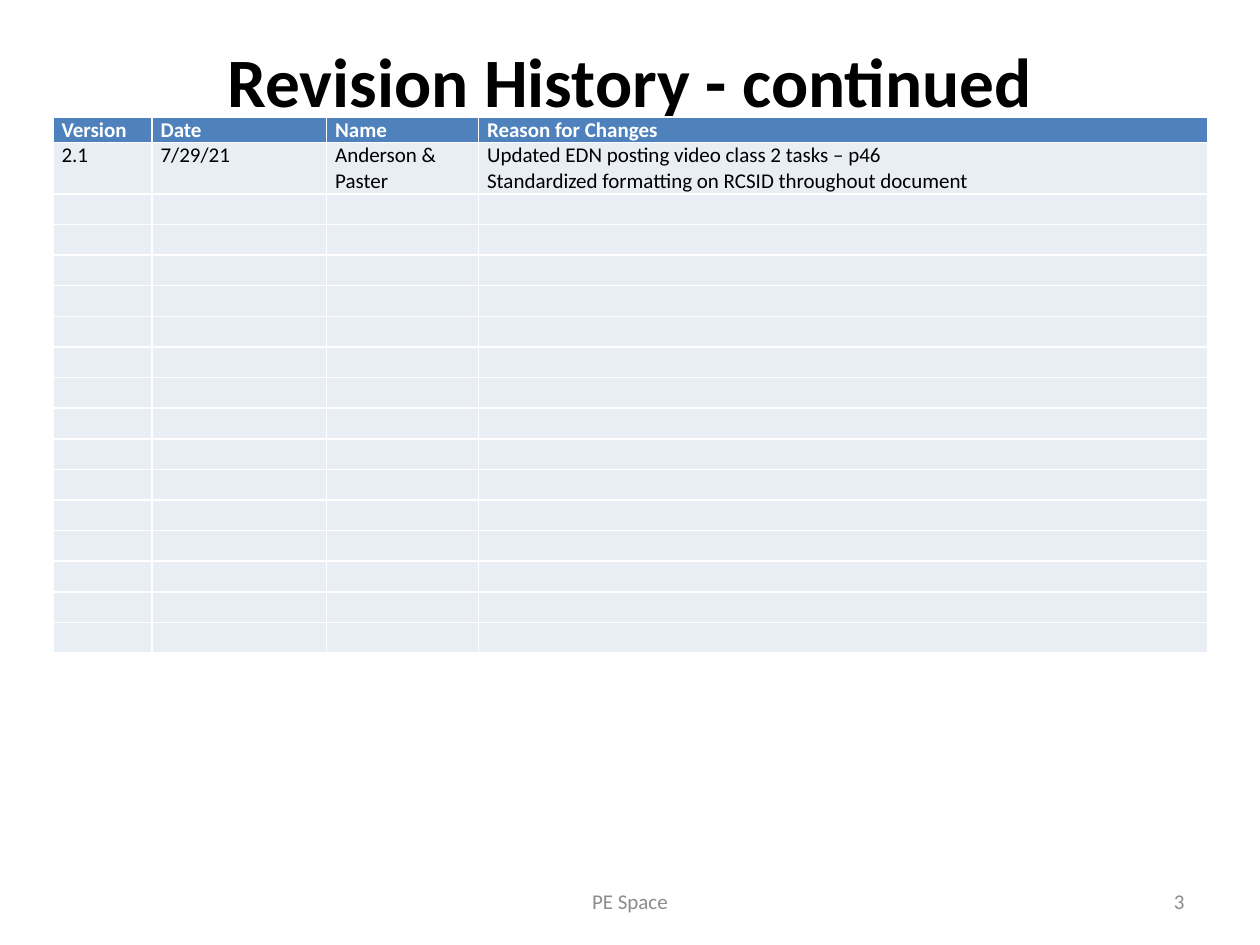
from pptx import Presentation
from pptx.dml.color import RGBColor
from pptx.enum.text import MSO_ANCHOR, PP_ALIGN
from pptx.util import Pt

COLORS = {
    "header": "4F81BD",
    "body": "E9EDF4",
    "white": "FFFFFF",
    "black": "000000",
    "footer": "8C8C8C",
}


def style_paragraph(paragraph, size, color, bold=False, alignment=PP_ALIGN.LEFT):
    paragraph.alignment = alignment
    paragraph.font.name = "Calibri"
    paragraph.font.size = Pt(size)
    paragraph.font.bold = bold
    paragraph.font.color.rgb = RGBColor.from_string(COLORS[color])


presentation = Presentation()
presentation.slide_width = Pt(720)
presentation.slide_height = Pt(540)
slide = presentation.slides.add_slide(presentation.slide_layouts[6])

text_boxes = [
    ("Revision History - continued", (36, 21.6, 648, 90), 39.6, "black", True, PP_ALIGN.CENTER, MSO_ANCHOR.TOP),
    ("PE Space", (246, 500.5, 228, 28.75), 12, "footer", False, PP_ALIGN.CENTER, MSO_ANCHOR.MIDDLE),
    ("3", (516, 500.5, 168, 28.75), 12, "footer", False, PP_ALIGN.RIGHT, MSO_ANCHOR.MIDDLE),
]
for text, box, size, color, bold, alignment, anchor in text_boxes:
    shape = slide.shapes.add_textbox(*map(Pt, box))
    frame = shape.text_frame
    frame.word_wrap = True
    frame.vertical_anchor = anchor
    frame.margin_top = frame.margin_bottom = 0
    frame.text = text
    style_paragraph(frame.paragraphs[0], size, color, bold, alignment)

column_widths = [56.6, 99.8, 86.8, 416.8]
empty_row_count = 15
rows = [
    ["Version", "Date", "Name", "Reason for Changes"],
    [
        "2.1",
        "7/29/21",
        "Anderson & Paster",
        "Updated EDN posting video class 2 tasks – p46\nStandardized formatting on RCSID throughout document",
    ],
] + [[""] * len(column_widths)] * empty_row_count
row_heights = [14.65, 29.3] + [17.5] * empty_row_count

table = slide.shapes.add_table(
    len(rows), len(column_widths), Pt(30.2), Pt(66.9), Pt(sum(column_widths)), Pt(sum(row_heights))
).table
table.horz_banding = False
for column, width in zip(table.columns, column_widths):
    column.width = Pt(width)

for row_index, (row, height, texts) in enumerate(zip(table.rows, row_heights, rows)):
    row.height = Pt(height)
    is_header = row_index == 0
    for cell, text in zip(row.cells, texts):
        cell.fill.solid()
        cell.fill.fore_color.rgb = RGBColor.from_string(COLORS["header" if is_header else "body"])
        cell.margin_left = cell.margin_right = Pt(5)
        cell.margin_top = cell.margin_bottom = 0
        cell.text = text
        for paragraph in cell.text_frame.paragraphs:
            style_paragraph(paragraph, 12, "white" if is_header else "black", is_header)

presentation.save("out.pptx")
